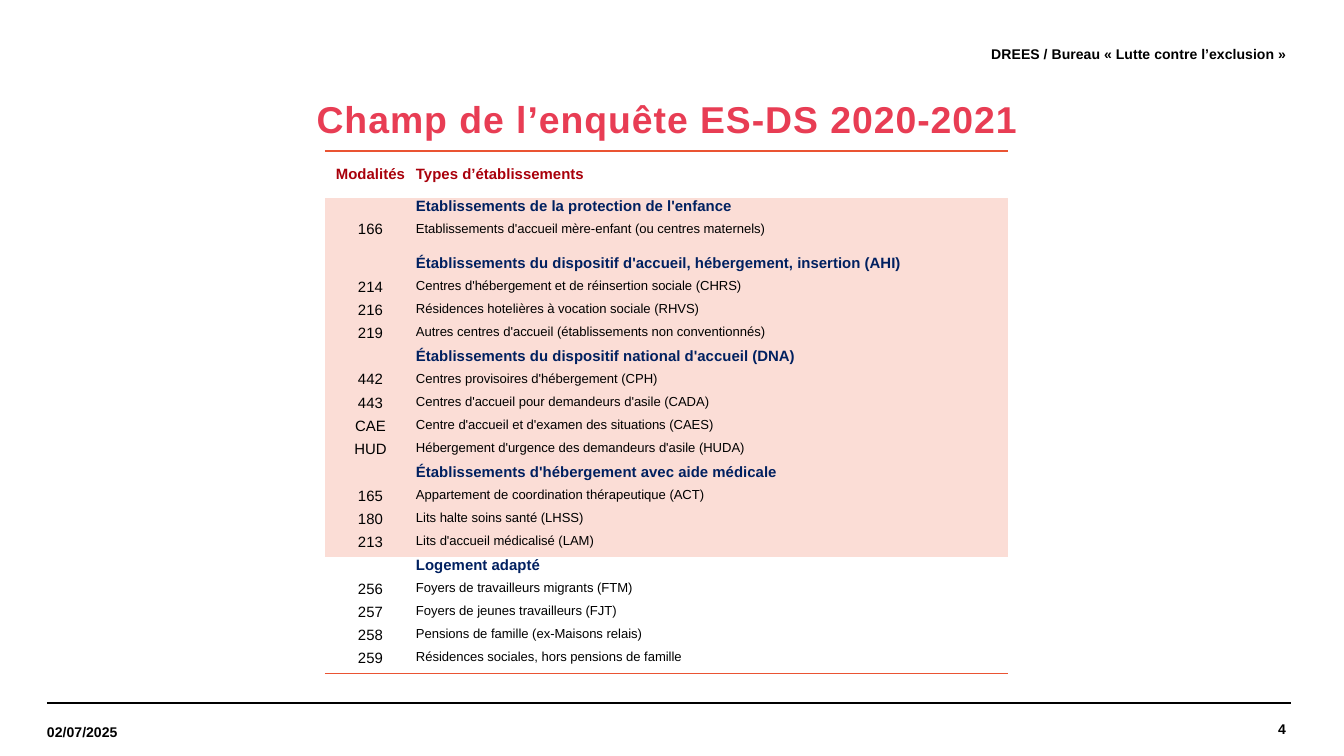
from lxml import etree
from pptx import Presentation, util as u
from pptx.dml.color import RGBColor
from pptx.enum import shapes, text
from pptx.oxml.ns import qn

PX = 914400 / 134.4
BLACK = RGBColor(0x00, 0x00, 0x00)
TITLE_RED = RGBColor(0xE8, 0x3D, 0x54)
HEADER_RED = RGBColor(0xA9, 0x00, 0x0B)
NAVY = RGBColor(0x00, 0x20, 0x60)
PINK = RGBColor(0xFB, 0xDD, 0xD6)
ORANGE = RGBColor(0xEA, 0x54, 0x33)
LEFT, CENTER, RIGHT = text.PP_ALIGN.LEFT, text.PP_ALIGN.CENTER, text.PP_ALIGN.RIGHT

# Group heading, then its establishments
GROUPS = [
    ("Etablissements de la protection de l'enfance", [
        ("166", "Etablissements d'accueil mère-enfant (ou centres maternels)")]),
    ("Établissements du dispositif d'accueil, hébergement, insertion (AHI)", [
        ("214", "Centres d'hébergement et de réinsertion sociale (CHRS)"),
        ("216", "Résidences hotelières à vocation sociale (RHVS)"),
        ("219", "Autres centres d'accueil (établissements non conventionnés)")]),
    ("Établissements du dispositif national d'accueil (DNA)", [
        ("442", "Centres provisoires d'hébergement (CPH)"),
        ("443", "Centres d'accueil pour demandeurs d'asile (CADA)"),
        ("CAE", "Centre d'accueil et d'examen des situations (CAES)"),
        ("HUD", "Hébergement d'urgence des demandeurs d'asile (HUDA)")]),
    ("Établissements d'hébergement avec aide médicale", [
        ("165", "Appartement de coordination thérapeutique (ACT)"),
        ("180", "Lits halte soins santé (LHSS)"),
        ("213", "Lits d'accueil médicalisé (LAM)")]),
    ("Logement adapté", [
        ("256", "Foyers de travailleurs migrants (FTM)"),
        ("257", "Foyers de jeunes travailleurs (FJT)"),
        ("258", "Pensions de famille (ex-Maisons relais)"),
        ("259", "Résidences sociales, hors pensions de famille")]),
]
UNSHADED_GROUP = "Logement adapté"


def px(count):
    return u.Emu(round(count * PX))


def write(para, words, size, color, bold, align):
    para.text = words
    para.alignment = align
    for span in para.runs:
        span.font.name = "Arial"
        span.font.size = u.Pt(size)
        span.font.bold = bold
        span.font.color.rgb = color
    if not words:  # keeps an empty cell from stretching its row
        para._p.get_or_add_endParaRPr().set("sz", str(size * 100))


deck = Presentation()
deck.slide_width, deck.slide_height = px(1344), px(756)
page = deck.slides.add_slide(deck.slide_layouts[6])

# Footer rule, drawn as two overlapping lines
for left in (47, 52):
    rule = page.shapes.add_connector(
        shapes.MSO_CONNECTOR.STRAIGHT, px(left), px(703), px(left + 1239), px(703))
    rule.line.color.rgb = BLACK
    rule.line.width = u.Pt(0.8)
    etree.SubElement(rule._element.spPr, qn("a:effectLst"))

# Title, header and footer texts
for words, left, top, width, height, size, color, align in (
    ("4", 1087, 703, 199, 52, 7.5, BLACK, RIGHT),
    ("DREES / Bureau « Lutte contre l’exclusion »", 422, 28, 864, 52, 7.5, BLACK, RIGHT),
    ("02/07/2025", 47, 706, 172, 51, 7.5, BLACK, LEFT),
    ("Champ de l’enquête ES-DS 2020-2021", 47, 82, 1240, 79, 20, TITLE_RED, CENTER),
):
    box = page.shapes.add_textbox(px(left), px(top), px(width), px(height))
    frame = box.text_frame
    frame.word_wrap = True
    frame.vertical_anchor = text.MSO_ANCHOR.MIDDLE
    frame.margin_left = frame.margin_right = frame.margin_top = frame.margin_bottom = 0
    write(frame.paragraphs[0], words, size, color, True, align)
    if color == TITLE_RED:
        frame.paragraphs[0].line_spacing = 0.9
        frame.paragraphs[0].runs[0]._r.get_or_add_rPr().set("spc", "50")

# Rows: code, label, code colour, label size, label colour, bold, shaded
rows = [("Modalités", "Types d’établissements", 8, HEADER_RED, True, False)]
for heading, establishments in GROUPS:
    shaded = heading != UNSHADED_GROUP
    rows.append(("", heading, 8, NAVY, True, shaded))
    rows += [(code, label, 7, BLACK, False, shaded) for code, label in establishments]

TABLE_HEIGHT = 523
special_heights = {0: 47, 2: 34}
row_height = (TABLE_HEIGHT - sum(special_heights.values())) / (len(rows) - len(special_heights))

table_frame = page.shapes.add_table(len(rows), 2, px(325), px(151), px(683), px(TABLE_HEIGHT))
table = table_frame.table
table.first_row = table.horz_banding = False
NO_STYLE_NO_GRID = "{2D5ABB26-0587-4C30-8999-92F81FD0307C}"
table._tbl.tblPr.find(qn("a:tableStyleId")).text = NO_STYLE_NO_GRID
table.columns[0].width, table.columns[1].width = px(91), px(592)

borders = {0: "a:lnT", len(rows) - 1: "a:lnB"}
for index, (code, label, label_size, color, bold, shaded) in enumerate(rows):
    table.rows[index].height = px(special_heights.get(index, row_height))
    for column, (words, size, align) in enumerate(
            ((code, 8, CENTER), (label, label_size, LEFT))):
        cell = table.cell(index, column)
        cell.margin_left = cell.margin_right = cell.margin_top = cell.margin_bottom = 0
        cell.vertical_anchor = text.MSO_ANCHOR.MIDDLE if index == 0 else text.MSO_ANCHOR.TOP
        write(cell.text_frame.paragraphs[0], words, size, color, bold, align)
        if shaded:
            cell.fill.solid()
            cell.fill.fore_color.rgb = PINK
        else:
            cell.fill.background()
        if index in borders:
            border = etree.Element(qn(borders[index]), w=str(u.Pt(1)))
            paint = etree.SubElement(border, qn("a:solidFill"))
            etree.SubElement(paint, qn("a:srgbClr"), val=str(ORANGE))
            cell._tc.get_or_add_tcPr().insert(0, border)

deck.save("out.pptx")
